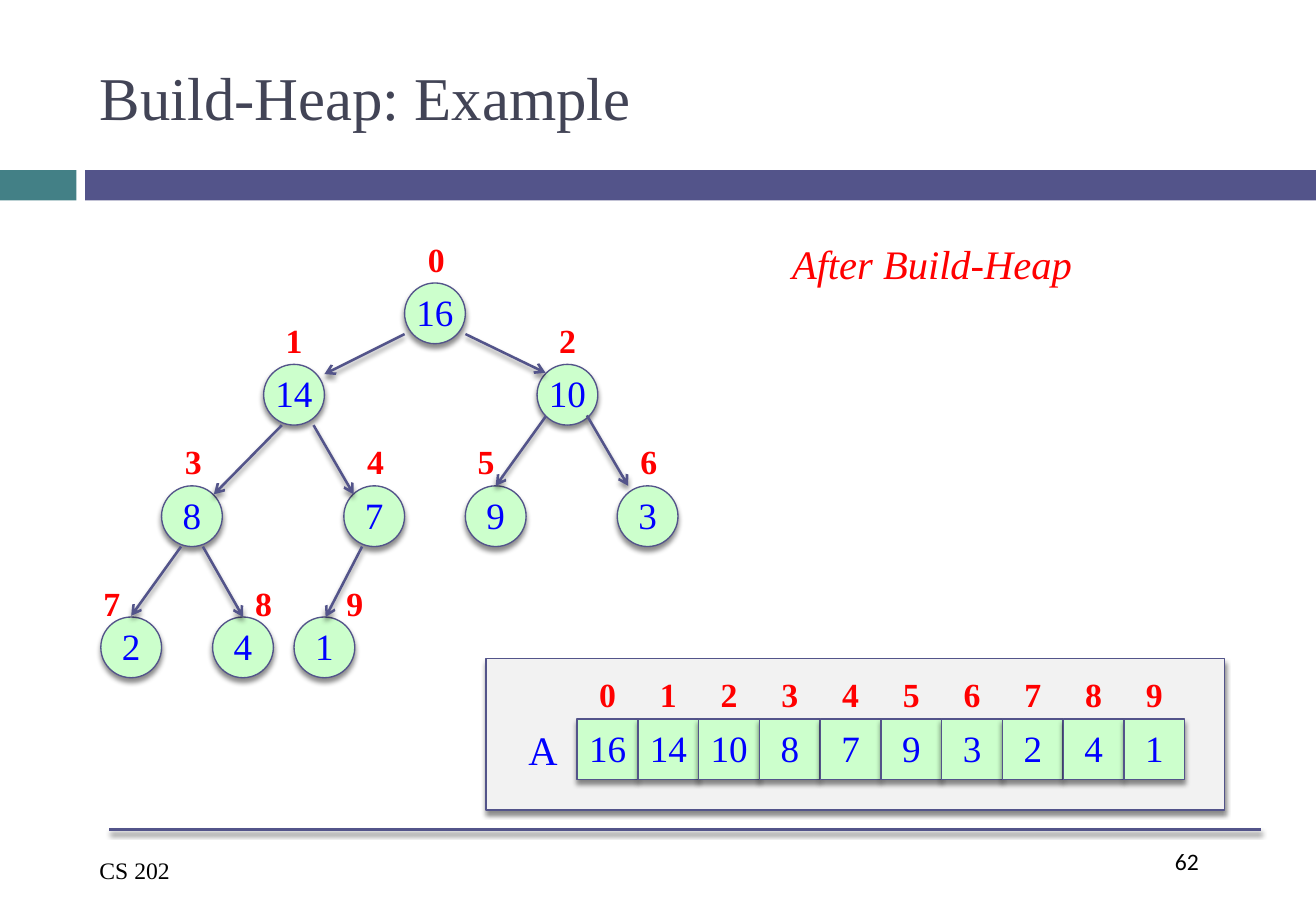
from typing import NamedTuple

from lxml.etree import SubElement
from pptx import Presentation
from pptx.dml.color import RGBColor
from pptx.enum.shapes import MSO_CONNECTOR, MSO_SHAPE
from pptx.enum.text import MSO_ANCHOR, MSO_AUTO_SIZE, PP_ALIGN
from pptx.oxml import parse_xml
from pptx.oxml.ns import nsdecls, qn
from pptx.slide import Slide
from pptx.text.text import TextFrame
from pptx.util import Inches, Pt

SERIF = "Times New Roman"
INDIGO = "53548A"
TEAL = "438086"
MINT = "CCFFCC"
BLUE = "0000FF"
RED = "FF0000"
BLACK = "000000"
CELL = 0.5
ARRAY_LEFT = 4.75
ARRAY_TOP = 5.92

SHADOW = (
    f'<a:effectLst {nsdecls("a")}><a:outerShdw blurRad="38100" dist="30480" '
    'dir="5400000" rotWithShape="0"><a:srgbClr val="000000">'
    '<a:alpha val="45000"/></a:srgbClr></a:outerShdw></a:effectLst>'
)


class Node(NamedTuple):
    value: int
    left: float
    top: float
    index_left: float
    index_top: float


class Edge(NamedTuple):
    start_x: float
    start_y: float
    end_x: float
    end_y: float


class Font(NamedTuple):
    size: int
    color: str
    name: str = SERIF
    bold: bool = False
    italic: bool = False


VALUE_FONT = Font(22, BLUE)
INDEX_FONT = Font(20, RED, bold=True)

NODES = [
    Node(16, 3.33, 2.33, 3.42, 1.92),
    Node(14, 2.17, 3, 2.25, 2.58),
    Node(10, 4.42, 3, 4.5, 2.58),
    Node(8, 1.33, 4, 1.42, 3.58),
    Node(7, 2.83, 4, 2.92, 3.58),
    Node(9, 3.83, 4, 3.83, 3.58),
    Node(3, 5.08, 4, 5.17, 3.58),
    Node(2, 0.83, 5.08, 0.75, 4.75),
    Node(4, 1.75, 5.08, 2, 4.75),
    Node(1, 2.42, 5.08, 2.75, 4.75),
]

EDGES = [
    Edge(3.33, 2.75, 2.67, 3.08),
    Edge(3.83, 2.75, 4.49, 3.07),
    Edge(2.32, 3.5, 1.76, 4.07),
    Edge(2.58, 3.5, 2.91, 4.07),
    Edge(4.49, 3.43, 4.08, 4),
    Edge(4.83, 3.42, 5.17, 4),
    Edge(1.49, 4.5, 1.08, 5.07),
    Edge(1.67, 4.5, 2, 5.08),
    Edge(2.98, 4.5, 2.68, 5.08),
]


def rgb(color: str) -> RGBColor:
    return RGBColor.from_string(color)


def write(frame: TextFrame, text: str, font: Font, align: PP_ALIGN = PP_ALIGN.LEFT) -> None:
    frame.text = text
    paragraph = frame.paragraphs[0]
    paragraph.alignment = align
    paragraph.font.name = font.name
    paragraph.font.size = Pt(font.size)
    paragraph.font.bold = font.bold
    paragraph.font.italic = font.italic
    paragraph.font.color.rgb = rgb(font.color)


def add_text(slide: Slide, text: str, left: float, top: float, width: float, height: float,
             font: Font, align: PP_ALIGN = PP_ALIGN.LEFT) -> None:
    box = slide.shapes.add_textbox(Inches(left), Inches(top), Inches(width), Inches(height))
    write(box.text_frame, text, font, align)


def add_bar(slide: Slide, left: float, width: float, color: str) -> None:
    shape = slide.shapes.add_shape(
        MSO_SHAPE.RECTANGLE, Inches(left), Inches(1.4), Inches(width), Inches(0.25))
    shape.fill.solid()
    shape.fill.fore_color.rgb = rgb(color)
    shape.line.fill.background()
    shape.shadow.inherit = False


def add_raised(slide: Slide, kind: MSO_SHAPE, left: float, top: float, width: float,
               height: float, color: str, text: str = "") -> None:
    shape = slide.shapes.add_shape(kind, Inches(left), Inches(top), Inches(width), Inches(height))
    shape.fill.solid()
    shape.fill.fore_color.rgb = rgb(color)
    shape.line.color.rgb = rgb(INDIGO)
    shape.line.width = Pt(0.79)
    shape._element.spPr.append(parse_xml(SHADOW))
    if text:
        frame = shape.text_frame
        frame.word_wrap = False
        frame.vertical_anchor = MSO_ANCHOR.MIDDLE
        frame.margin_left = frame.margin_right = frame.margin_top = 0
        frame.margin_bottom = Inches(0.03)
        write(frame, text, VALUE_FONT, PP_ALIGN.CENTER)


def add_line(slide: Slide, edge: Edge, arrow: bool = True) -> None:
    connector = slide.shapes.add_connector(
        MSO_CONNECTOR.STRAIGHT, *(Inches(length) for length in edge))
    connector.line.color.rgb = rgb(INDIGO)
    connector.line.width = Pt(1.5)
    properties = connector._element.spPr
    if arrow:
        SubElement(properties.find(qn("a:ln")), qn("a:tailEnd"), type="arrow")
    properties.append(parse_xml(SHADOW))


def add_index(slide: Slide, index: int, left: float, top: float) -> None:
    add_text(slide, str(index), left, top, 0.34, 0.44, INDEX_FONT, PP_ALIGN.CENTER)


def add_title(slide: Slide, text: str) -> None:
    title = slide.shapes.title
    title.left, title.top = Inches(0.72), Inches(0.25)
    title.width, title.height = Inches(9.66), Inches(1.08)
    title.text_frame.auto_size = MSO_AUTO_SIZE.NONE
    title.text_frame.vertical_anchor = MSO_ANCHOR.MIDDLE
    write(title.text_frame, text, Font(36, "424456"))


def add_tree(slide: Slide) -> None:
    for node in NODES:
        add_raised(slide, MSO_SHAPE.OVAL, node.left, node.top, CELL, CELL, MINT, str(node.value))
    for edge in EDGES:
        add_line(slide, edge)
    for index, node in enumerate(NODES):
        add_index(slide, index, node.index_left, node.index_top)


def add_array(slide: Slide) -> None:
    add_raised(slide, MSO_SHAPE.RECTANGLE, 4, 5.42, 6.08, 1.25, "F2F2F2")
    add_text(slide, "A", 4.25, ARRAY_TOP, 0.45, 0.5, Font(24, BLUE))
    for index, node in enumerate(NODES):
        left = ARRAY_LEFT + index * CELL
        add_raised(slide, MSO_SHAPE.RECTANGLE, left, ARRAY_TOP, CELL, CELL, MINT, str(node.value))
        add_index(slide, index, left + 0.08, 5.5)


def main() -> None:
    presentation = Presentation()
    presentation.slide_width = Inches(10.83)
    presentation.slide_height = Inches(7.5)
    slide = presentation.slides.add_slide(presentation.slide_layouts[5])
    add_bar(slide, 0, 0.63, TEAL)
    add_bar(slide, 0.7, 10.13, INDIGO)
    add_line(slide, Edge(0.9, 6.83, 10.38, 6.83), arrow=False)
    add_text(slide, "62", 9.57, 6.92, 0.81, 0.5, Font(14, BLACK, "Calibri"))
    add_text(slide, "CS 202", 0.72, 7, 1.99, 0.34, Font(14, BLACK))
    add_title(slide, "Build-Heap: Example")
    add_array(slide)
    add_tree(slide)
    add_text(slide, "After Build-Heap", 6.42, 1.92, 2.53, 0.5, Font(24, RED, italic=True))
    presentation.save("out.pptx")


if __name__ == "__main__":
    main()
